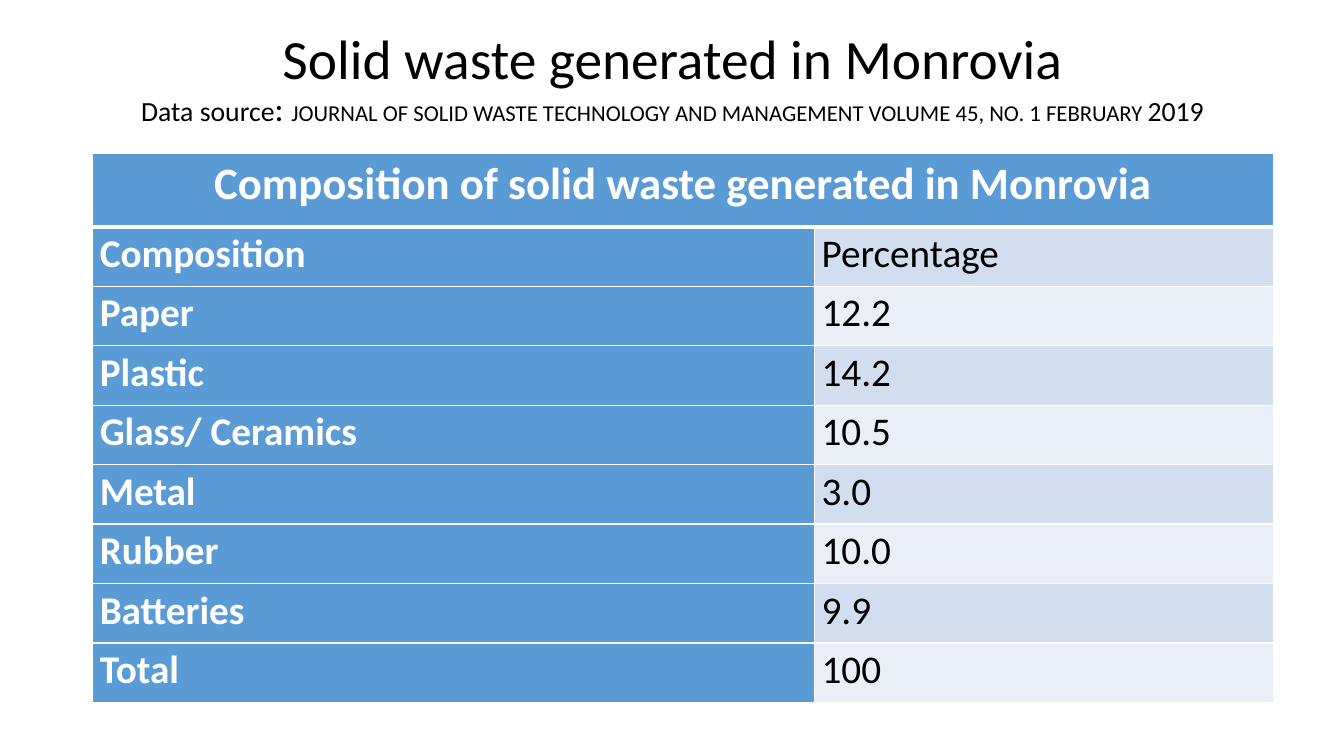
import pptx
import pptx.util
import pptx.dml.color
import pptx.enum.text
import lxml.etree
from pptx.oxml.ns import qn

Inches, Pt = pptx.util.Inches, pptx.util.Pt
RGBColor = pptx.dml.color.RGBColor
PP_ALIGN, MSO_ANCHOR = pptx.enum.text.PP_ALIGN, pptx.enum.text.MSO_ANCHOR

BLACK = RGBColor(0x00, 0x00, 0x00)
WHITE = RGBColor(0xFF, 0xFF, 0xFF)
BLUE = RGBColor(0x5B, 0x9B, 0xD5)
BANDS = [RGBColor(0xEA, 0xEF, 0xF7), RGBColor(0xD2, 0xDE, 0xEF)]
FONT = "Calibri"

LEFT = 0.92
COL_WIDTHS = [7.16, 4.55]
HEADER_H, ROW_H = 0.73, 0.59


def style_run(r, size, color, bold=False):
    r.font.name = FONT
    r.font.size = Pt(size)
    r.font.color.rgb = color
    r.font.bold = bold


def add_borders(cell, top, bottom):
    tcPr = cell._tc.get_or_add_tcPr()
    for i, (side, width) in enumerate([("L", 1), ("R", 1), ("T", top), ("B", bottom)]):
        ln = lxml.etree.Element(qn("a:ln" + side), w=str(Pt(width)))
        fill = lxml.etree.SubElement(ln, qn("a:solidFill"))
        lxml.etree.SubElement(fill, qn("a:srgbClr"), val=str(WHITE))
        tcPr.insert(i, ln)


prs = pptx.Presentation()
prs.slide_width, prs.slide_height = Inches(13.33), Inches(7.5)
s = prs.slides.add_slide(prs.slide_layouts[6])

# Title and data source
tf = s.shapes.add_textbox(Inches(LEFT), Inches(0.4), Inches(11.5), Inches(0.79)).text_frame
tf.word_wrap = True
tf.vertical_anchor = MSO_ANCHOR.MIDDLE
p = tf.paragraphs[0]
p.alignment = PP_ALIGN.CENTER
p.line_spacing = 0.9
p.text = "Solid waste generated in Monrovia"
style_run(p.runs[0], 39.6, BLACK)
p.add_line_break()
for text, size in [
    ("Data source", 19.8),
    (": ", 24.3),
    ("JOURNAL OF SOLID WASTE TECHNOLOGY AND MANAGEMENT VOLUME 45, NO. 1 FEBRUARY ", 16.2),
    ("2019", 19.8),
]:
    r = p.add_run()
    r.text = text
    style_run(r, size, BLACK)

# Waste composition table
rows = [
    ("Composition of solid waste generated in Monrovia", ""),
    ("Composition", "Percentage"),
    ("Paper", "12.2"),
    ("Plastic", "14.2"),
    ("Glass/ Ceramics", "10.5"),
    ("Metal", "3.0"),
    ("Rubber", "10.0"),
    ("Batteries", "9.9"),
    ("Total", "100"),
]
table_h = HEADER_H + ROW_H * (len(rows) - 1)
table = s.shapes.add_table(len(rows), len(COL_WIDTHS), Inches(LEFT), Inches(1.52),
                           Inches(sum(COL_WIDTHS)), Inches(table_h)).table
for column, width in zip(table.columns, COL_WIDTHS):
    column.width = Inches(width)
table.cell(0, 0).merge(table.cell(0, 1))

for i, row in enumerate(rows):
    header = i == 0
    table.rows[i].height = Inches(HEADER_H if header else ROW_H)
    for j, text in enumerate(row):
        cell = table.cell(i, j)
        label = header or j == 0
        cell.margin_left = cell.margin_right = Inches(0.07)
        cell.margin_top = cell.margin_bottom = 0
        cell.fill.solid()
        cell.fill.fore_color.rgb = BLUE if label else BANDS[i % 2]
        # A thicker rule separates the header from the body
        add_borders(cell, top=3 if i == 1 else 1, bottom=3 if header else 1)
        cell.text_frame.text = text
        p = cell.text_frame.paragraphs[0]
        p.line_spacing = 1.07
        p.alignment = PP_ALIGN.CENTER if header else PP_ALIGN.LEFT
        for r in p.runs:
            style_run(r, 32 if header else 28, WHITE if label else BLACK, label)

prs.save("out.pptx")
